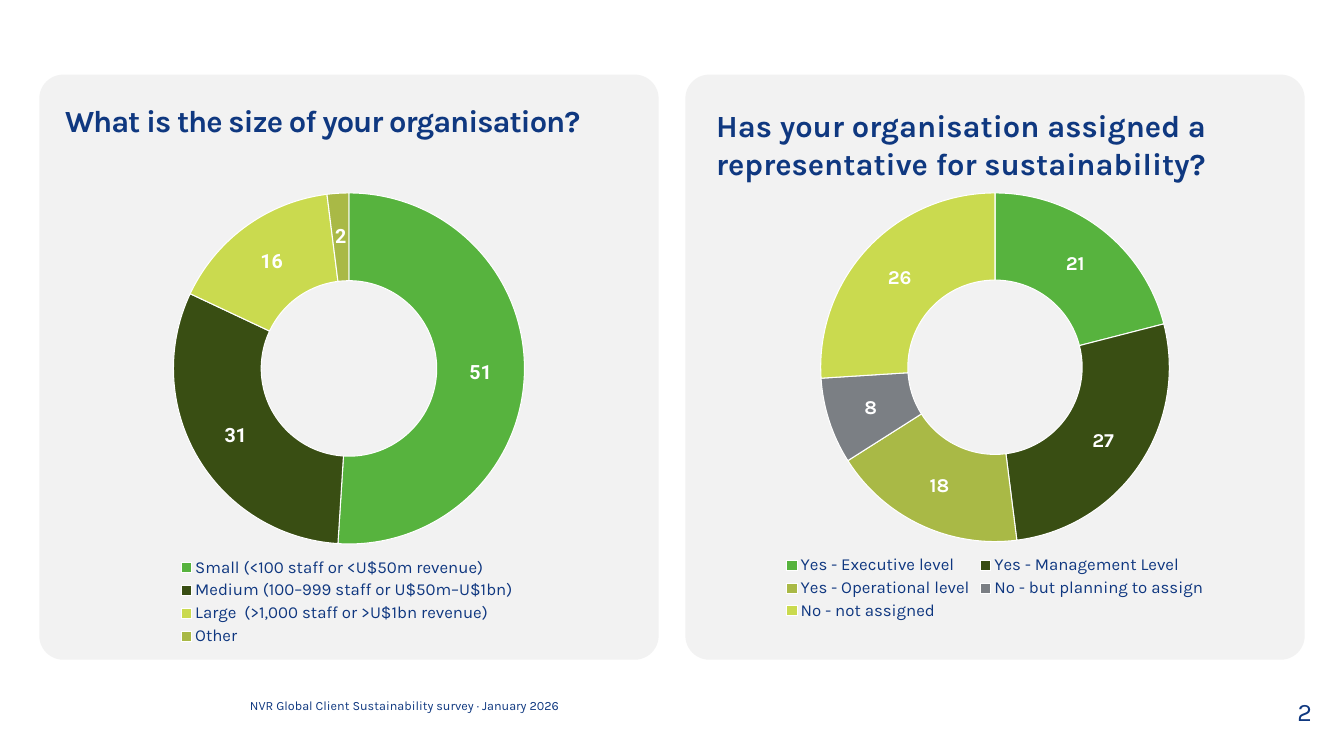
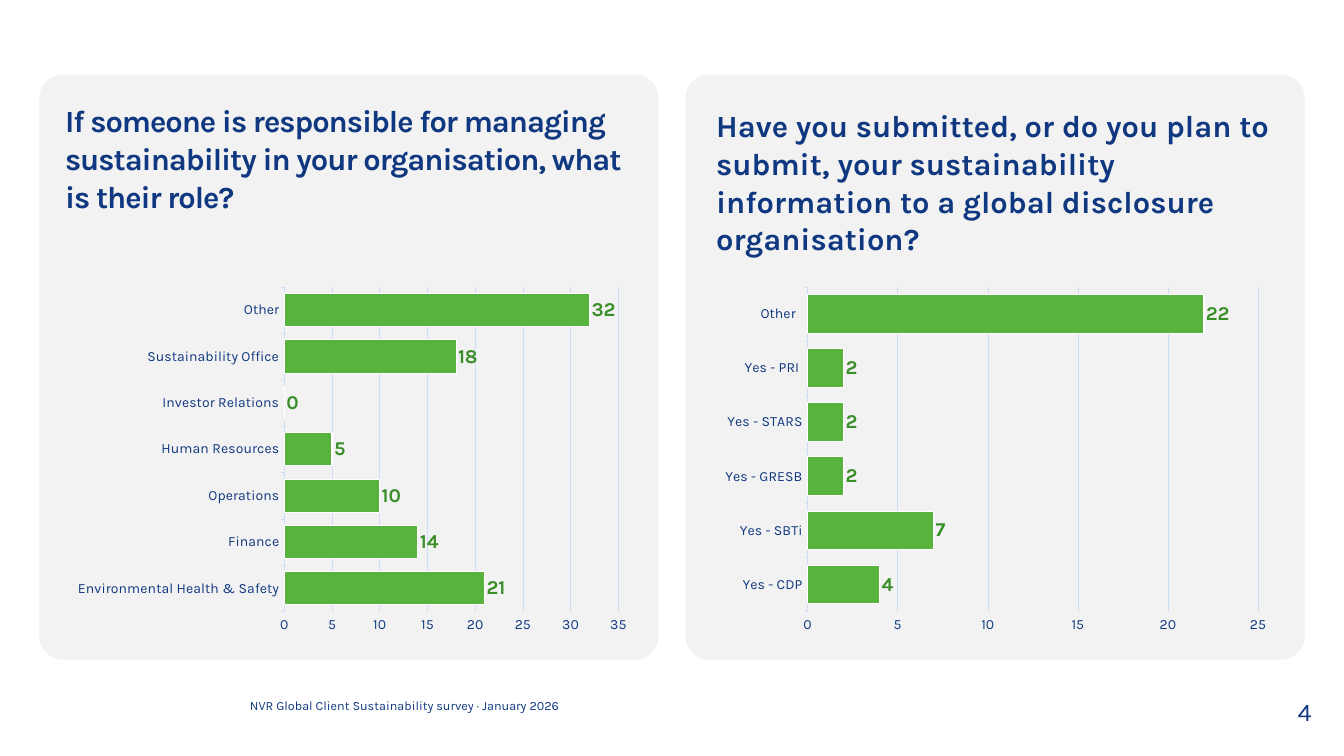
from dataclasses import dataclass

import pptx
import pptx.chart.data
import pptx.dml.color
import pptx.enum.chart
import pptx.enum.shapes
import pptx.enum.text
import pptx.util

Inches, Pt = pptx.util.Inches, pptx.util.Pt
ChartType = pptx.enum.chart.XL_CHART_TYPE
Tick = pptx.enum.chart.XL_TICK_MARK


@dataclass(frozen=True)
class Theme:
    navy: str = "0F3880"
    chart_navy: str = "0F3780"
    white: str = "FFFFFF"
    card: str = "F2F2F2"
    grid: str = "CEDEF9"
    green: str = "57B33E"
    value_green: str = "388E27"
    forest: str = "394E13"
    lime: str = "CADA4F"
    olive: str = "A9B946"
    grey: str = "7B7F84"
    font: str = "Karla"
    alt_font: str = "Roboto"
    heading: int = 44
    heading_leading: int = 54
    number: int = 36
    value: int = 28
    legend: int = 24
    axis: int = 20
    footer: int = 18


@dataclass(frozen=True)
class Box:
    left: float
    top: float
    width: float
    height: float

    def inner(self, dx, dy, width, height):
        return Box(self.left + dx, self.top + dy, width, height)

    def emu(self):
        return [Inches(v) for v in (self.left, self.top, self.width, self.height)]


THEME = Theme()
SLIDE = Box(0, 0, 26.67, 15)
LEFT_CARD, RIGHT_CARD = (Box(left, 1.48, 12.29, 11.61) for left in (0.78, 13.6))
FOOTER = "NVR Global Client Sustainability survey · January 2026"


def rgb(colour):
    return pptx.dml.color.RGBColor.from_string(colour)


def style_font(font, size, colour, bold=False, name=THEME.font):
    font.size, font.bold, font.name = Pt(size), bold, name
    font.color.rgb = rgb(colour)


def style_line(line, colour, width):
    line.color.rgb = rgb(colour)
    line.width = Pt(width)


def write(shape, text, size, bold=False, insets=(0, 0), align="LEFT", leading=None):
    frame = shape.text_frame
    frame.word_wrap = True
    frame.auto_size = pptx.enum.text.MSO_AUTO_SIZE.NONE
    frame.vertical_anchor = pptx.enum.text.MSO_ANCHOR.TOP
    frame.margin_left = frame.margin_right = Inches(insets[0])
    frame.margin_top = frame.margin_bottom = Inches(insets[1])
    frame.text = text
    paragraph = frame.paragraphs[0]
    paragraph.alignment = getattr(pptx.enum.text.PP_ALIGN, align)
    if leading:
        paragraph.line_spacing = Pt(leading)
    style_font(paragraph.font, size, THEME.navy, bold)
    return paragraph


def add_card(slide, box):
    card = slide.shapes.add_shape(
        pptx.enum.shapes.MSO_SHAPE.ROUNDED_RECTANGLE, *box.emu())
    card.adjustments[0] = 0.041
    card.fill.solid()
    card.fill.fore_color.rgb = rgb(THEME.card)
    card.line.fill.background()
    card.shadow.inherit = False


def add_left_heading(slide, card, text):
    """Fill the title placeholder and bring it in front of the cards."""
    title = slide.shapes.title
    title.left, title.top, title.width, title.height = card.inner(
        0.51, 0.52, 11.48, 1.73).emu()
    paragraph = write(title, text, THEME.heading, True, leading=THEME.heading_leading)
    paragraph.runs[0].font._element.set("spc", "-150")
    slide.shapes._spTree.append(title._element)


def add_right_heading(slide, card, text):
    heading = slide.shapes.add_textbox(*card.inner(0.41, 0.52, 11.51, 1.83).emu())
    write(heading, text, THEME.heading, True, (0.2, 0.1), leading=THEME.heading_leading)


def add_footer(slide, page, number):
    source = slide.shapes.add_textbox(*page.inner(4.96, 13.84, 8.37, 0.37).emu())
    write(source, FOOTER, THEME.footer)
    page_number = slide.shapes.add_textbox(*page.inner(25.35, 13.82, 1.08, 0.37).emu())
    write(page_number, str(number), THEME.number, align="CENTER")


def add_value_chart(slide, box, kind, answers, label_colour, label_font=THEME.font):
    """Add a one-series chart with bold value labels."""
    data = pptx.chart.data.CategoryChartData()
    data.categories = [name for name, *_ in answers]
    data.add_series("Series 1", [value for _, value, *_ in answers])
    chart = slide.shapes.add_chart(kind, *box.emu(), data).chart
    chart.has_title = False
    style_font(chart.font, THEME.axis, THEME.chart_navy)
    plot = chart.plots[0]
    plot.vary_by_categories = False
    plot.has_data_labels = True
    labels = plot.data_labels
    labels.show_value = True
    labels.show_percentage = False
    style_font(labels.font, THEME.value, label_colour, True, label_font)
    return chart


def add_doughnut(slide, box, answers, label_font=THEME.font):
    chart = add_value_chart(
        slide, box, ChartType.DOUGHNUT, answers, THEME.white, label_font)
    plot = chart.plots[0]
    plot.vary_by_categories = True
    for hole in plot._element.xpath("c:holeSize"):
        hole.set("val", "70")
    for index, (_, _, colour) in enumerate(answers):
        style = plot.series[0].points[index].format
        style.fill.solid()
        style.fill.fore_color.rgb = rgb(colour)
        style_line(style.line, THEME.white, 1.5)
    chart.has_legend = True
    chart.legend.position = pptx.enum.chart.XL_LEGEND_POSITION.BOTTOM
    chart.legend.include_in_layout = False
    style_font(chart.legend.font, THEME.legend, THEME.chart_navy)


def add_bars(slide, box, answers, maximum):
    chart = add_value_chart(
        slide, box, ChartType.BAR_CLUSTERED, answers, THEME.value_green)
    chart.has_legend = False
    plot = chart.plots[0]
    plot.gap_width = 40
    plot.data_labels.position = pptx.enum.chart.XL_LABEL_POSITION.OUTSIDE_END
    bars = plot.series[0].format
    bars.fill.solid()
    bars.fill.fore_color.rgb = rgb(THEME.green)
    style_line(bars.line, THEME.white, 1.5)
    for axis in (chart.category_axis, chart.value_axis):
        axis.major_tick_mark, axis.minor_tick_mark = Tick.OUTSIDE, Tick.NONE
        style_font(axis.tick_labels.font, THEME.axis, THEME.chart_navy)
    style_line(chart.category_axis.format.line, THEME.grid, 0.75)
    scale = chart.value_axis
    scale.minimum_scale, scale.maximum_scale, scale.major_unit = 0, maximum, 5
    scale.format.line.fill.background()
    scale.has_major_gridlines = True
    style_line(scale.major_gridlines.format.line, THEME.grid, 0.75)


def add_survey_slide(deck, number, left_question, right_question):
    slide = deck.slides.add_slide(deck.slide_layouts.get_by_name("Title Only"))
    for card in (RIGHT_CARD, LEFT_CARD):
        add_card(slide, card)
    add_left_heading(slide, LEFT_CARD, left_question)
    add_right_heading(slide, RIGHT_CARD, right_question)
    add_footer(slide, SLIDE, number)
    return slide


def add_profile_slide(deck):
    slide = add_survey_slide(
        deck, 2, "What is the size of your organisation?",
        "Has your organisation assigned a representative for sustainability?")
    add_doughnut(slide, LEFT_CARD.inner(0, 2.21, 12.29, 9.19), [
        ("Small (<100 staff or <U$50m revenue)", 51, THEME.green),
        ("Medium (100–999 staff or U$50m–U$1bn) ", 31, THEME.forest),
        ("Large  (>1,000 staff or >U$1bn revenue) ", 16, THEME.lime),
        ("Other ", 2, THEME.olive),
    ], THEME.alt_font)
    add_doughnut(slide, RIGHT_CARD.inner(0, 2.21, 12.29, 8.69), [
        ("Yes - Executive level", 21, THEME.green),
        ("Yes - Management Level", 27, THEME.forest),
        ("Yes - Operational level", 18, THEME.olive),
        ("No - but planning to assign", 8, THEME.grey),
        ("No - not assigned", 26, THEME.lime),
    ])


def add_responsibility_slide(deck):
    slide = add_survey_slide(
        deck, 4,
        "If someone is responsible for managing sustainability in your "
        "organisation, what is their role?",
        "Have you submitted, or do you plan to submit, your sustainability "
        "information to a global disclosure organisation?")
    add_bars(slide, LEFT_CARD.inner(0.54, 4.07, 11.34, 7.16), [
        ("Environmental Health & Safety", 21),
        ("Finance", 14),
        ("Operations", 10),
        ("Human Resources", 5),
        ("Investor Relations", 0),
        ("Sustainability Office", 18),
        ("Other", 32),
    ], 35)
    add_bars(slide, RIGHT_CARD.inner(0.57, 4.07, 11.18, 7.16), [
        ("Yes - CDP", 4),
        ("Yes - SBTi", 7),
        ("Yes - GRESB", 2),
        ("Yes - STARS", 2),
        ("Yes - PRI ", 2),
        ("Other  ", 22),
    ], 25)


def main():
    deck = pptx.Presentation()
    deck.slide_width, deck.slide_height = Inches(SLIDE.width), Inches(SLIDE.height)
    add_profile_slide(deck)
    add_responsibility_slide(deck)
    deck.save("out.pptx")


if __name__ == "__main__":
    main()
